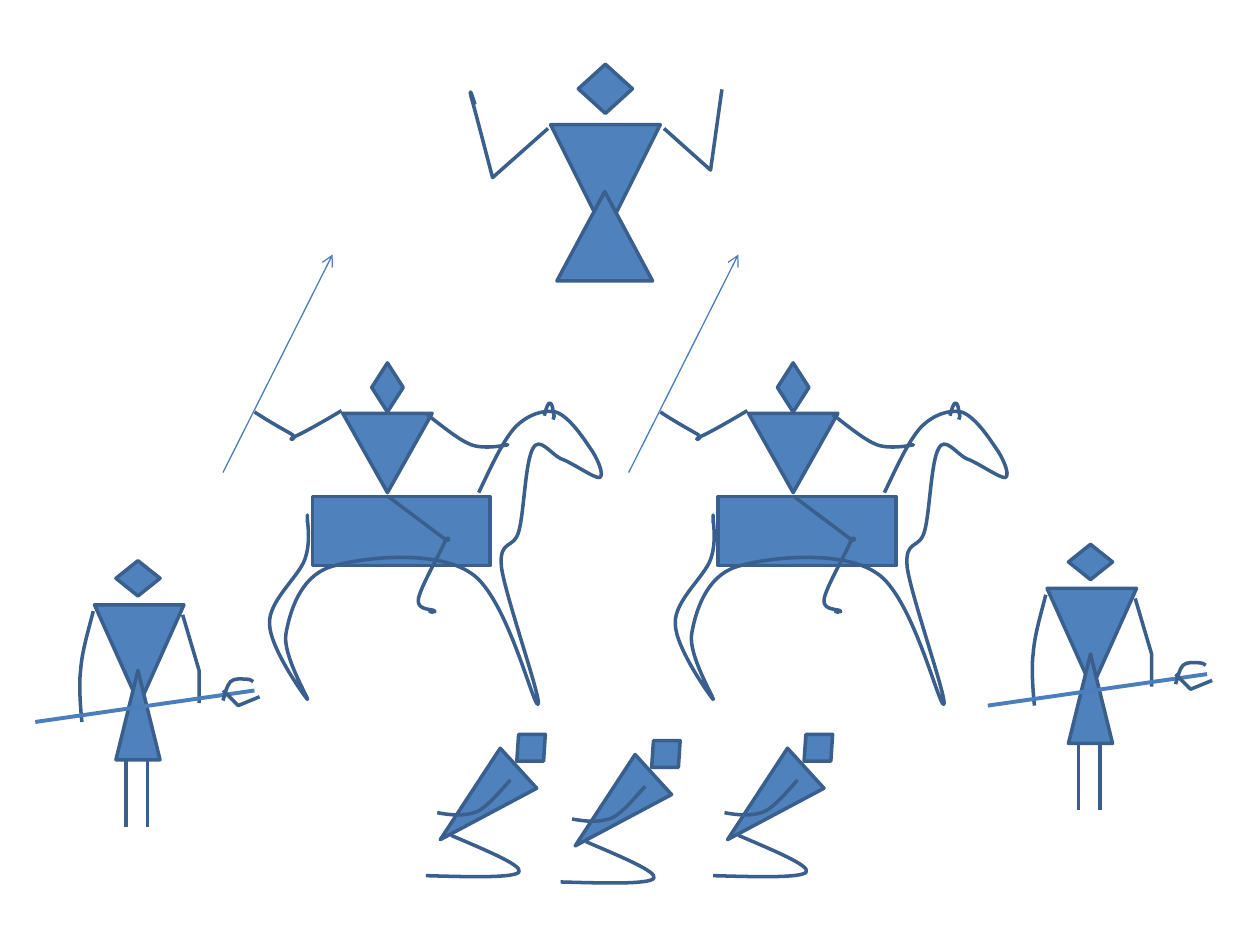
from dataclasses import dataclass

from pptx import Presentation
from pptx.dml.color import RGBColor
from pptx.enum.shapes import MSO_CONNECTOR, MSO_SHAPE
from pptx.oxml.xmlchemy import OxmlElement
from pptx.util import Inches, Pt

TRI = MSO_SHAPE.ISOSCELES_TRIANGLE
GEM = MSO_SHAPE.DIAMOND
BOX = MSO_SHAPE.RECTANGLE
LINE = MSO_CONNECTOR.STRAIGHT
BLUE, DARK, MID = "4F81BD", "3A5F8C", "4B7EBC"


@dataclass
class Block:
    kind: int
    x: float
    y: float
    w: float
    h: float
    turn: float = 0


@dataclass
class Stroke:
    start: tuple
    steps: list


@dataclass
class Rod:
    x1: float
    y1: float
    x2: float
    y2: float
    color: str = DARK
    weight: float = 2
    arrow: bool = False


LEADER = [
    Block(TRI, 4.37, 0.99, 0.87, 0.87, 180),
    Block(GEM, 4.59, 0.51, 0.43, 0.39),
    Stroke((4.35, 1.02), [
        (3.91, 1.41),
        (3.88, 1.3, 3.77, 0.87, 3.74, 0.77),
        (3.72, 0.68, 3.75, 0.76, 3.77, 0.83)]),
    Stroke((5.27, 1.02), [(5.64, 1.35), (5.73, 0.71)]),
    Block(TRI, 4.42, 1.52, 0.76, 0.71),
]

RIDER = [
    Block(TRI, 2.72, 3.28, 0.71, 0.63, 180),
    Block(BOX, 2.48, 3.94, 1.41, 0.55),
    Stroke((3.08, 3.94), [
        (3.52, 4.27),
        (3.59, 4.33, 3.56, 4.22, 3.53, 4.3),
        (3.5, 4.38, 3.33, 4.67, 3.32, 4.76),
        (3.31, 4.85, 3.44, 4.83, 3.45, 4.85),
        (3.47, 4.86, 3.41, 4.85, 3.41, 4.85),
        (3.41, 4.85, 3.42, 4.86, 3.44, 4.86)]),
    Block(GEM, 2.95, 2.88, 0.25, 0.39),
    Stroke((3.8, 3.91), [
        (3.9, 3.7, 3.99, 3.5, 4.09, 3.39),
        (4.19, 3.29, 4.31, 3.25, 4.41, 3.27),
        (4.51, 3.3, 4.62, 3.46, 4.68, 3.55),
        (4.74, 3.63, 4.8, 3.77, 4.76, 3.79),
        (4.72, 3.8, 4.54, 3.67, 4.45, 3.64),
        (4.37, 3.6, 4.28, 3.46, 4.23, 3.56),
        (4.17, 3.66, 4.16, 4.06, 4.12, 4.21),
        (4.08, 4.37, 3.96, 4.27, 3.98, 4.5),
        (4.01, 4.73, 4.31, 5.58, 4.27, 5.59),
        (4.23, 5.6, 4.02, 4.73, 3.74, 4.55),
        (3.47, 4.36, 2.87, 4.42, 2.62, 4.5),
        (2.38, 4.58, 2.3, 4.86, 2.27, 5.03),
        (2.24, 5.2, 2.46, 5.56, 2.44, 5.55),
        (2.42, 5.53, 2.14, 5.14, 2.14, 4.95),
        (2.13, 4.77, 2.37, 4.58, 2.42, 4.44),
        (2.47, 4.3, 2.44, 4.15, 2.44, 4.11),
        (2.44, 4.06, 2.44, 4.1, 2.44, 4.15)]),
    Stroke((4.32, 3.3), [
        (4.33, 3.25, 4.35, 3.2, 4.36, 3.2),
        (4.38, 3.19, 4.39, 3.25, 4.39, 3.27),
        (4.4, 3.3, 4.4, 3.31, 4.39, 3.33)]),
    Stroke((3.39, 3.29), [
        (3.52, 3.39, 3.64, 3.49, 3.74, 3.53),
        (3.85, 3.57, 4.03, 3.53, 4.03, 3.53),
        (4, 3.53)]),
    Stroke((2.71, 3.26), [
        (2.56, 3.35, 2.4, 3.44, 2.33, 3.47),
        (2.27, 3.5, 2.37, 3.49, 2.32, 3.45),
        (2.27, 3.42, 2.14, 3.35, 2.02, 3.27)]),
    Rod(1.77, 3.75, 2.64, 2.02, MID, 0.75, True),
]

GUARD = [
    Block(TRI, 0.75, 4.8, 0.71, 0.79, 180),
    Block(GEM, 0.92, 4.45, 0.35, 0.28),
    Block(TRI, 0.92, 5.32, 0.35, 0.71),
    Stroke((0.74, 4.85), [
        (0.7, 5.01, 0.65, 5.17, 0.64, 5.32),
        (0.62, 5.46, 0.65, 5.73, 0.65, 5.73)]),
    Stroke((1.45, 4.88), [(1.58, 5.32), (1.58, 5.58)]),
    Rod(0.28, 5.73, 2.02, 5.48, MID, 2.25),
    Stroke((1.77, 5.56), [
        (1.79, 5.5, 1.8, 5.44, 1.83, 5.41),
        (1.86, 5.38, 1.92, 5.39, 1.95, 5.39),
        (1.98, 5.39, 2, 5.4, 2.01, 5.41)]),
    Stroke((1.77, 5.48), [(1.89, 5.6), (2.06, 5.53)]),
    Rod(1, 6.03, 1, 6.56),
    Rod(1.17, 6.03, 1.17, 6.56),
]

KNEELER = [
    Block(TRI, 3.59, 5.96, 0.43, 0.84, 227.6),
    Block(GEM, 4.07, 5.78, 0.29, 0.31, 46.9),
    Stroke((3.58, 6.63), [
        (3.86, 6.75, 4.15, 6.87, 4.12, 6.92),
        (4.09, 6.97, 3.73, 6.96, 3.38, 6.95)]),
    Stroke((4.05, 6.19), [
        (3.96, 6.29, 3.88, 6.39, 3.79, 6.44),
        (3.69, 6.48, 3.58, 6.47, 3.47, 6.45)]),
]

SCENE = [
    (LEADER, 0, 0),
    (RIDER, 0, 0),
    (RIDER, 3.22, 0),
    (GUARD, 0, 0),
    (GUARD, 7.56, -0.13),
    (KNEELER, 1.07, 0.05),
    (KNEELER, 2.28, 0),
    (KNEELER, 0, 0),
]


def paint(line, color: str, weight: float) -> None:
    line.color.rgb = RGBColor.from_string(color)
    line.width = Pt(weight)


def draw_block(shapes, part: Block, dx: float, dy: float) -> None:
    shape = shapes.add_shape(part.kind, Inches(part.x + dx), Inches(part.y + dy),
                             Inches(part.w), Inches(part.h))
    shape.rotation = part.turn
    shape.shadow.inherit = False
    shape.fill.solid()
    shape.fill.fore_color.rgb = RGBColor.from_string(BLUE)
    paint(shape.line, DARK, 2)


def draw_stroke(shapes, part: Stroke, dx: float, dy: float) -> None:
    def place(x: float, y: float) -> tuple:
        return Inches(x + dx), Inches(y + dy)

    spots = [place(*step[i:i + 2]) for step in part.steps
             for i in range(0, len(step), 2)]
    pen = shapes.build_freeform(*place(*part.start), scale=1.0)
    pen.add_line_segments(spots, close=False)
    shape = pen.convert_to_shape()
    shape.shadow.inherit = False
    shape.fill.background()
    paint(shape.line, DARK, 2)

    nodes = iter(shape.element.xpath(".//a:path/a:lnTo"))
    for step in part.steps:
        group = [next(nodes) for _ in range(len(step) // 2)]
        if len(group) == 3:
            curve = OxmlElement("a:cubicBezTo")
            group[0].addprevious(curve)
            for node in group:
                curve.append(node[0])
                node.getparent().remove(node)


def draw_rod(shapes, part: Rod, dx: float, dy: float) -> None:
    rod = shapes.add_connector(LINE, Inches(part.x1 + dx), Inches(part.y1 + dy),
                               Inches(part.x2 + dx), Inches(part.y2 + dy))
    paint(rod.line, part.color, part.weight)
    if part.arrow:
        tip = OxmlElement("a:tailEnd")
        tip.set("type", "arrow")
        rod.element.spPr.find("{*}ln").append(tip)
    rod.element.spPr.append(OxmlElement("a:effectLst"))


DRAW = {Block: draw_block, Stroke: draw_stroke, Rod: draw_rod}


def main() -> None:
    deck = Presentation()
    deck.slide_width, deck.slide_height = Inches(10), Inches(7.5)
    slide = deck.slides.add_slide(deck.slide_layouts[6])
    for figure, dx, dy in SCENE:
        for part in figure:
            DRAW[type(part)](slide.shapes, part, dx, dy)
    deck.save("out.pptx")


if __name__ == "__main__":
    main()
